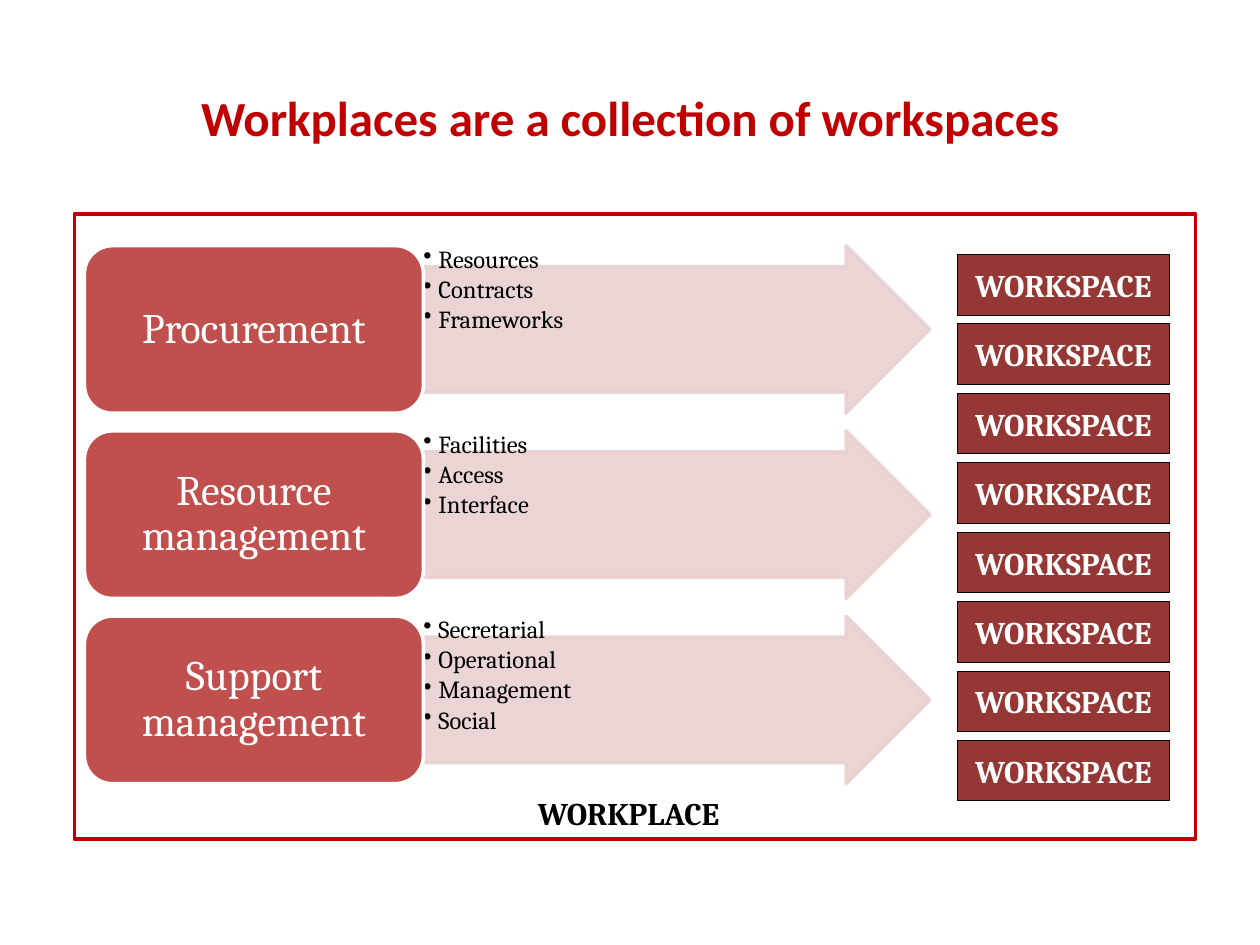
"""Build a slide showing a workplace as a collection of workspaces."""
from lxml.etree import SubElement
from pptx import Presentation
from pptx.dml.color import RGBColor
from pptx.enum.shapes import MSO_SHAPE
from pptx.enum.text import MSO_ANCHOR, PP_ALIGN
from pptx.oxml.ns import qn
from pptx.util import Inches, Pt

RED = RGBColor(0xC0, 0x00, 0x00)
ROSE = RGBColor(0xC0, 0x50, 0x4D)
PINK = RGBColor(0xE8, 0xD0, 0xD0)
WINE = RGBColor(0x95, 0x37, 0x35)
BLACK = RGBColor(0x00, 0x00, 0x00)
WHITE = RGBColor(0xFF, 0xFF, 0xFF)

deck = Presentation()
deck.slide_width, deck.slide_height = Inches(10), Inches(7.5)
COL, ROW = deck.slide_width / 100, deck.slide_height / 75
slide = deck.slides.add_slide(deck.slide_layouts[5])


def draw(kind, col, row, wide, high, fill=None, line=None, width=2):
    spot = [int(col * COL), int(row * ROW), int(wide * COL), int(high * ROW)]
    if kind is None:
        return slide.shapes.add_textbox(*spot)
    shape = slide.shapes.add_shape(kind, *spot)
    shape.shadow.inherit = False
    if fill is None:
        shape.fill.background()
    else:
        shape.fill.solid()
        shape.fill.fore_color.rgb = fill
    shape.line.color.rgb = line
    shape.line.width = Pt(width)
    return shape


def write(shape, text, size=18, color=WHITE, font="Cambria", bold=False,
          align=PP_ALIGN.CENTER, anchor=MSO_ANCHOR.MIDDLE, space=None,
          after=0, inset=None, bullet=False):
    frame = shape.text_frame
    frame.word_wrap = True
    frame.vertical_anchor = anchor
    if inset is not None:
        frame.margin_left = frame.margin_right = Inches(inset)
        frame.margin_top = frame.margin_bottom = Inches(inset)
    frame.text = text
    for para in frame.paragraphs:
        para.alignment = align
        para.line_spacing = space
        para.space_after = Pt(after)
        para.font.size = Pt(size)
        for run in para.runs:
            run.font.name = font
            run.font.size = Pt(size)
            run.font.bold = bold
            run.font.color.rgb = color
        if bullet:
            props = para._p.get_or_add_pPr()
            props.set("marL", str(Inches(0.12)))
            props.set("indent", str(-Inches(0.12)))
            mark = SubElement(props, qn("a:buChar"), char="•")
            props.insert_element_before(mark, "a:tabLst", "a:defRPr")


title = slide.shapes.title
title.left, title.top = int(5 * COL), int(3 * ROW)
title.width, title.height = int(90 * COL), int(12.5 * ROW)
write(title, "Workplaces are a collection of workspaces", size=28, color=RED,
      font="Calibri", bold=True)

GROUPS = [
    ("Procurement", ["Resources", "Contracts", "Frameworks"]),
    ("Resource management", ["Facilities", "Access", "Interface"]),
    ("Support management",
     ["Secretarial", "Operational", "Management", "Social"]),
]
for step, (name, items) in enumerate(GROUPS):
    row = 19.5 + 14.7 * step
    arrow = draw(MSO_SHAPE.RIGHT_ARROW, 33.5, row, 40.3, 13.3, PINK, PINK)
    arrow.adjustments[0], arrow.adjustments[1] = 0.75, 0.5
    for tint in arrow._element.spPr.iter(qn("a:srgbClr")):
        SubElement(tint, qn("a:alpha"), val="90000")
    notes = draw(None, 33.5, row, 40.3, 13.3)
    write(notes, "\n".join(items), size=14, color=BLACK, align=PP_ALIGN.LEFT,
          anchor=MSO_ANCHOR.TOP, space=0.9, after=2.1, inset=0.01, bullet=True)
    box = draw(MSO_SHAPE.ROUNDED_RECTANGLE, 6.7, row, 26.9, 13.3, ROSE, WHITE)
    write(box, name, size=24, space=0.9)

draw(MSO_SHAPE.RECTANGLE, 5.9, 17, 89, 49.6, line=RED)
for step in range(8):
    space = draw(MSO_SHAPE.RECTANGLE, 76, 20.2 + 5.51 * step, 16.8, 4.8,
                 WINE, BLACK, 0.5)
    write(space, "WORKSPACE", bold=True)

label = draw(None, 41.7, 62.5, 20.1, 4)
write(label, "WORKPLACE", color=BLACK, bold=True, align=PP_ALIGN.LEFT,
      anchor=MSO_ANCHOR.TOP)

deck.save("out.pptx")
